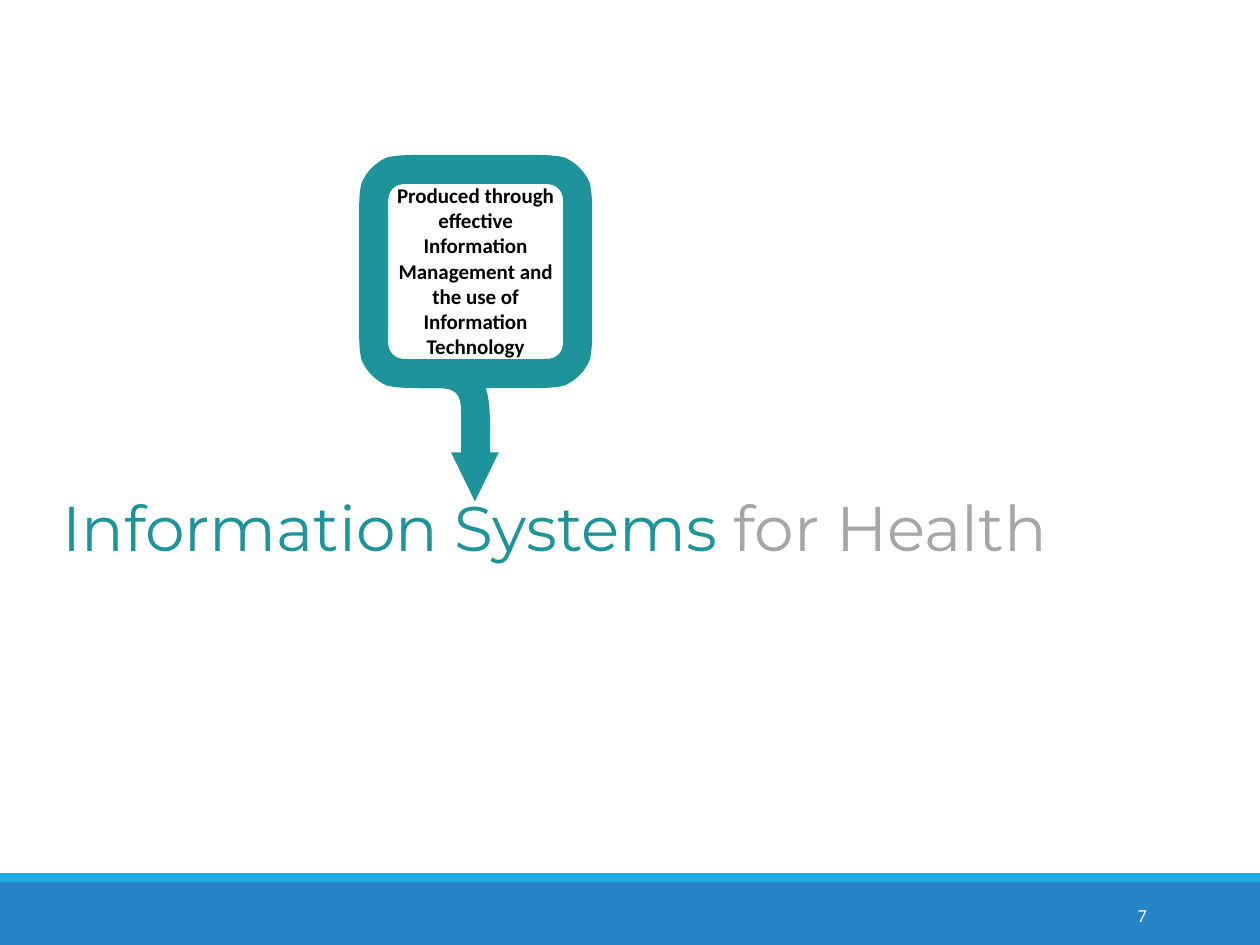
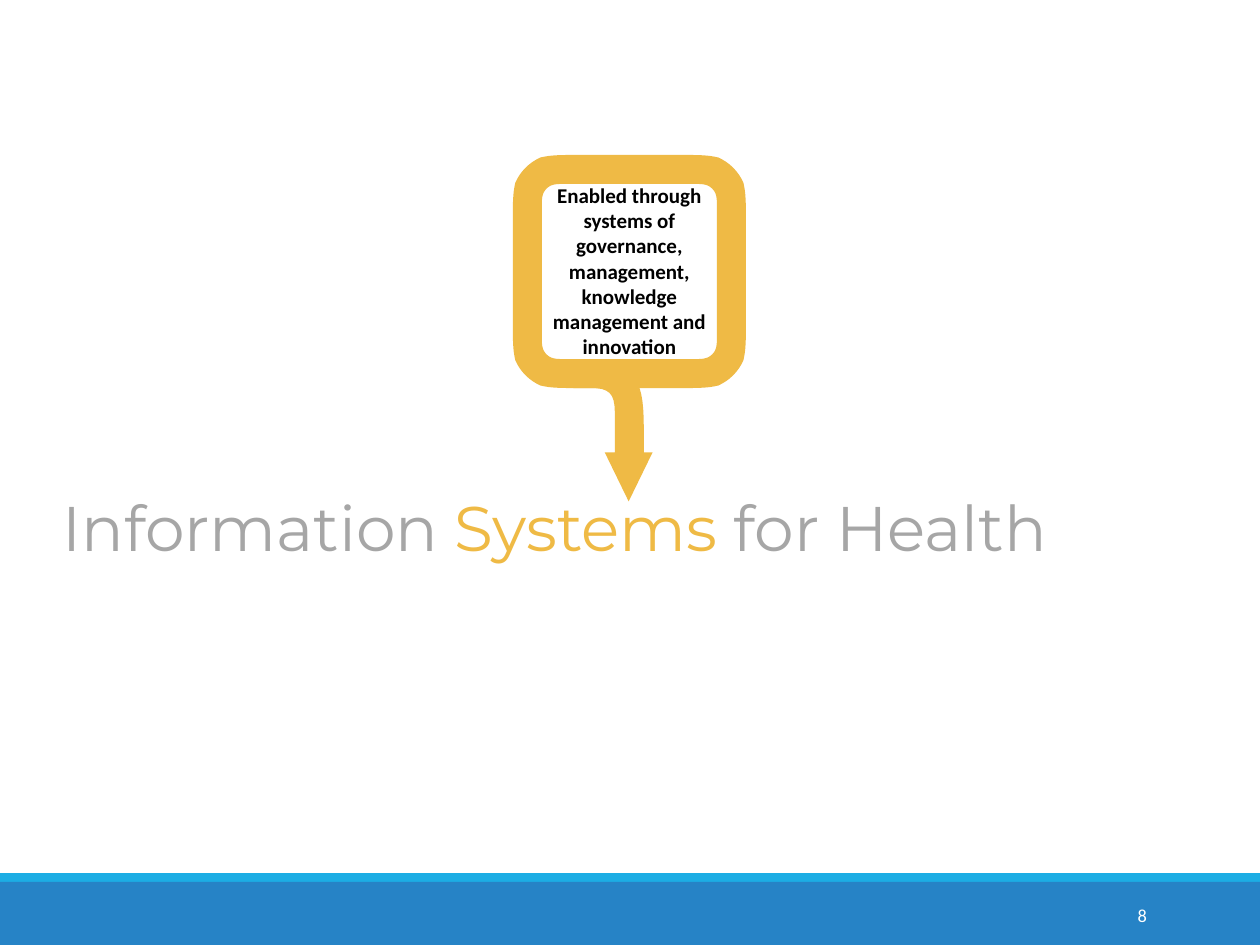
"""Builds two slides that explain parts of the phrase Information Systems for Health."""
from dataclasses import dataclass

from pptx import Presentation
from pptx import util as u
from pptx.dml import color
from pptx.enum import shapes, text


@dataclass(frozen=True)
class Theme:
    teal: str = "1E9399"
    gold: str = "EFBA45"
    gray: str = "A6A6A6"
    black: str = "000000"
    white: str = "FFFFFF"
    stripe: str = "1CADE4"
    band: str = "2683C6"
    body_font: str = "Calibri"
    title_font: str = "Montserrat"
    title_size: float = 36
    body_size: float = 12
    number_size: float = 10.5


FRAME_TOP = 1.23
FRAME_SIDE = 1.85
FRAME_RIM = 0.23
OUTER_CORNER = [(0.53, 0), (0.38, 0), (0.3, 0), (0.22, 0.02), (0.13, 0.06),
                (0.06, 0.13), (0.02, 0.22), (0, 0.3), (0, 0.38), (0, 0.53)]
INNER_CORNER = [(0.19, 0), (0.14, 0), (0.11, 0), (0.08, 0.01), (0.05, 0.02),
                (0.02, 0.05), (0.01, 0.08), (0, 0.11), (0, 0.14), (0, 0.19)]
ARROW_INNER_BEND = [(0.62, 3.08), (0.76, 3.08), (0.81, 3.12), (0.81, 3.27)]
ARROW_HEAD = [(0.81, 3.59), (0.73, 3.59), (0.92, 3.98), (1.11, 3.59), (1.04, 3.59)]
ARROW_OUTER_BEND = [(1.04, 3.39), (1.04, 3.18), (1.02, 3.04), (0.93, 2.95),
                    (0.85, 2.88), (0.72, 2.85), (0.5, 2.85)]


def curve(controls, steps=8):
    points = [controls[0]]
    for i in range(0, len(controls) - 1, 3):
        for t in (k / steps for k in range(1, steps + 1)):
            weights = ((1 - t) ** 3, 3 * t * (1 - t) ** 2, 3 * t * t * (1 - t), t ** 3)
            points.append(tuple(sum(w * c[axis] for w, c in zip(weights, controls[i:i + 4]))
                                for axis in (0, 1)))
    return points


def rounded_square(left, top, side, corner):
    arc = curve(corner)
    back = arc[::-1]
    far_x, far_y = left + side, top + side
    return ([(left + x, top + y) for x, y in arc]
            + [(left + x, far_y - y) for x, y in back]
            + [(far_x - x, far_y - y) for x, y in arc]
            + [(far_x - x, top + y) for x, y in back])


def write_text(sp, runs, font, size, bold=False, align=text.PP_ALIGN.LEFT,
               anchor=text.MSO_ANCHOR.TOP, wrap=True):
    tf = sp.text_frame
    tf.word_wrap = wrap
    tf.vertical_anchor = anchor
    p = tf.paragraphs[0]
    p.alignment = align
    for words, rgb in runs:
        r = p.add_run()
        r.text = words
        r.font.name, r.font.size, r.font.bold = font, u.Pt(size), bold
        r.font.color.rgb = color.RGBColor.from_string(rgb)


class Deck:
    def __init__(self, theme):
        self.theme = theme
        self.prs = Presentation()
        self.prs.slide_width, self.prs.slide_height = u.Inches(10), u.Inches(7.5)
        self.s = None

    def paint(self, sp, rgb):
        sp.shadow.inherit = False
        sp.fill.solid()
        sp.fill.fore_color.rgb = color.RGBColor.from_string(rgb)
        sp.line.fill.background()

    def rect(self, left, top, width, height, rgb):
        sp = self.s.shapes.add_shape(shapes.MSO_SHAPE.RECTANGLE,
                                     *map(u.Inches, (left, top, width, height)))
        self.paint(sp, rgb)

    def label(self, left, top, width, height, runs, **fmt):
        sp = self.s.shapes.add_textbox(*map(u.Inches, (left, top, width, height)))
        write_text(sp, runs, **fmt)

    def outline(self, contours, rgb):
        first, *holes = [[(u.Inches(x), u.Inches(y)) for x, y in c] for c in contours]
        builder = self.s.shapes.build_freeform(*first[0])
        builder.add_line_segments(first[1:])
        for hole in holes:
            builder.move_to(*hole[0])
            builder.add_line_segments(hole[1:])
        self.paint(builder.convert_to_shape(), rgb)

    def new_slide(self, number):
        t = self.theme
        self.s = self.prs.slides.add_slide(self.prs.slide_layouts[6])
        self.rect(0, 6.93, 10, 0.07, t.stripe)
        self.rect(0, 7, 10, 0.5, t.band)
        self.label(8.12, 7.06, 1.08, 0.4, [(str(number), t.white)], font=t.body_font,
                   size=t.number_size, align=text.PP_ALIGN.RIGHT,
                   anchor=text.MSO_ANCHOR.MIDDLE)

    def title(self, runs):
        self.label(0.4, 3.83, 8.84, 0.71, runs, font=self.theme.title_font,
                   size=self.theme.title_size, wrap=False)

    def callout(self, left, words, rgb):
        t = self.theme
        hole = rounded_square(left + FRAME_RIM, FRAME_TOP + FRAME_RIM,
                              FRAME_SIDE - 2 * FRAME_RIM, INNER_CORNER)
        self.outline([rounded_square(left, FRAME_TOP, FRAME_SIDE, OUTER_CORNER),
                      hole[::-1]], rgb)
        arrow = ([(0.5, 2.85), (0.48, 3.08)] + curve(ARROW_INNER_BEND)
                 + ARROW_HEAD + curve(ARROW_OUTER_BEND))
        self.outline([[(left + x, y) for x, y in arrow]], rgb)
        self.label(left + 0.2, 1.4, 1.45, 1.51, [(words, t.black)], font=t.body_font,
                   size=t.body_size, bold=True, align=text.PP_ALIGN.CENTER)


def main():
    t = Theme()
    deck = Deck(t)

    deck.new_slide(7)
    deck.title([("Information Systems ", t.teal), ("for Health", t.gray)])
    deck.callout(2.85, "Produced through effective Information Management "
                       "and the use of Information Technology", t.teal)

    deck.new_slide(8)
    deck.title([("Information ", t.gray), ("Systems ", t.gold), ("for Health", t.gray)])
    deck.callout(4.07, "Enabled through systems of governance, management, "
                       "knowledge management and innovation", t.gold)

    deck.prs.save("out.pptx")


if __name__ == "__main__":
    main()
